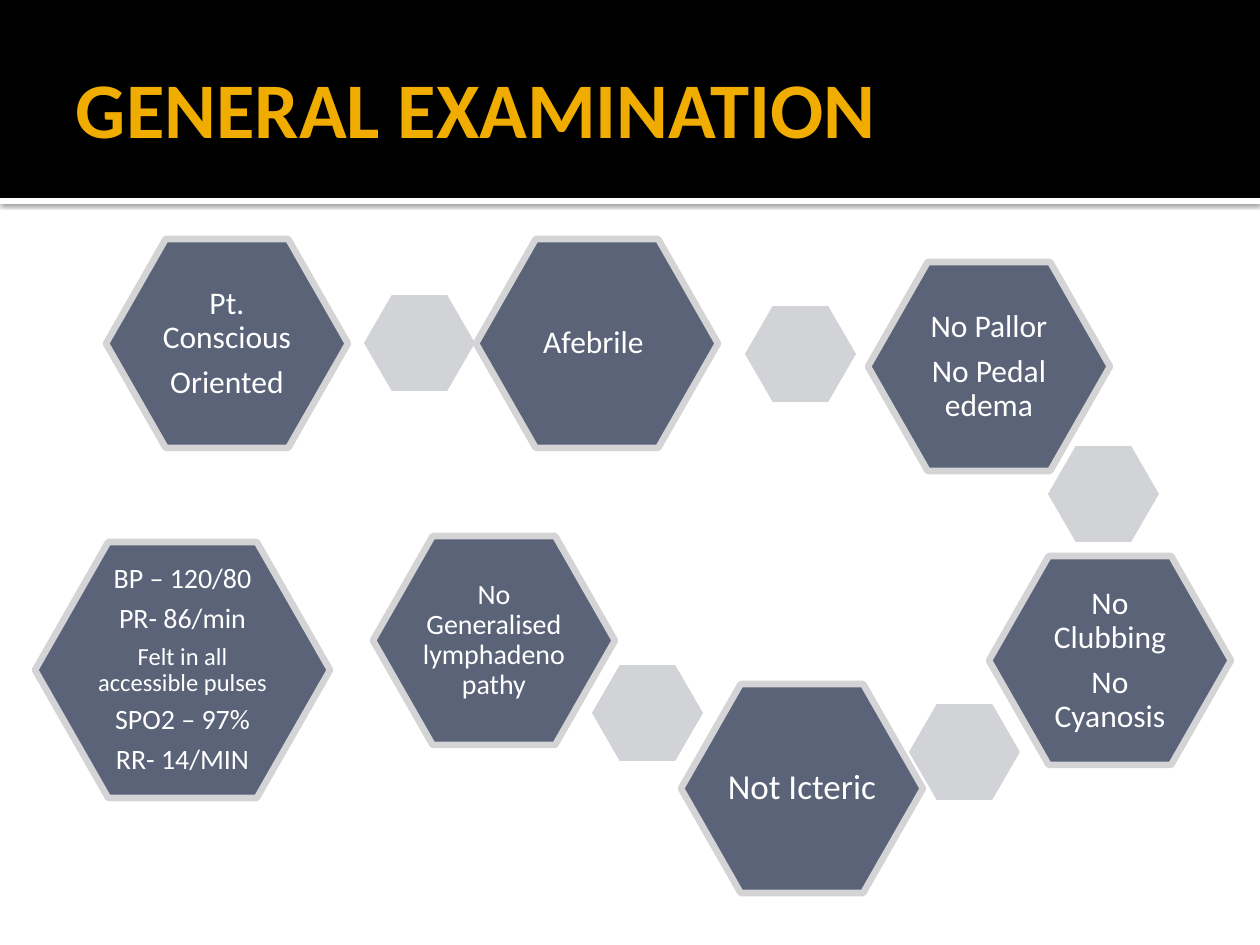
import lxml.etree
import pptx
import pptx.dml.color
import pptx.enum.shapes
import pptx.enum.text
import pptx.oxml
import pptx.oxml.ns
import pptx.util

EMU_PER_PX = 914400 / 126
FONT = "Calibri"
COLORS = {
    "black": "000000",
    "white": "FFFFFF",
    "title": "F0AD00",
    "finding": "5A6378",
    "outline": "D4D4D6",
    "link": "D2D3D6",
}
FINDING_SIZE = (242, 209)
VITALS_SIZE = (295, 256)
LINK_SIZE = (111, 96)

VITALS = (35, 542, [("BP – 120/80", 16), ("PR- 86/min", 16),
                    ("Felt in all accessible pulses", 14),
                    ("SPO2 – 97%", 16), ("RR- 14/MIN", 16)])
FINDINGS = [
    (106, 239, [("Pt. Conscious", 18), ("Oriented", 18)]),
    (476, 239, [("Afebrile ", 18)]),
    (868, 262, [("No Pallor", 18), ("No Pedal edema", 18)]),
    (989, 556, [("No Clubbing", 18), ("No Cyanosis", 18)]),
    (373, 536, [("No Generalised lymphadenopathy", 16)]),
    (681, 684, [("Not Icteric", 20)]),
]
LINKS = [(364, 295), (745, 306), (1048, 446), (909, 704), (592, 665)]


def px(length):
    return pptx.util.Emu(round(length * EMU_PER_PX))


def color(name):
    return pptx.dml.color.RGBColor.from_string(COLORS[name])


def add_filled(slide, kind, box, fill):
    shape = slide.shapes.add_shape(kind, *map(px, box))
    shape.shadow.inherit = False
    shape.fill.solid()
    shape.fill.fore_color.rgb = color(fill)
    shape.line.fill.background()
    return shape


def write_text(frame, lines, fill, margins, align, bold=False, line_spacing=None, gap=0):
    frame.word_wrap = True
    frame.auto_size = pptx.enum.text.MSO_AUTO_SIZE.NONE
    frame.vertical_anchor = pptx.enum.text.MSO_ANCHOR.MIDDLE
    (frame.margin_left, frame.margin_top,
     frame.margin_right, frame.margin_bottom) = map(px, margins)
    for index, (text, size) in enumerate(lines):
        paragraph = frame.add_paragraph() if index else frame.paragraphs[0]
        paragraph.alignment = align
        paragraph.line_spacing = line_spacing
        paragraph.space_after = pptx.util.Pt(round(size * gap, 1))
        run = paragraph.add_run()
        run.text = text
        run.font.name = FONT
        run.font.size = pptx.util.Pt(size)
        run.font.bold = bold
        run.font.color.rgb = color(fill)


def add_soft_shadow(shape):
    effects = shape._element.spPr.find(pptx.oxml.ns.qn("a:effectLst"))
    shadow = lxml.etree.SubElement(
        effects, pptx.oxml.ns.qn("a:outerShdw"),
        blurRad="31750", dist="10160", dir="5400000", algn="tl", rotWithShape="0")
    shade = lxml.etree.SubElement(shadow, pptx.oxml.ns.qn("a:srgbClr"), val=COLORS["black"])
    lxml.etree.SubElement(shade, pptx.oxml.ns.qn("a:alpha"), val="60000")


def add_header(slide, box, text):
    left, top, width, height = box
    rectangle = pptx.enum.shapes.MSO_SHAPE.RECTANGLE
    strip = add_filled(slide, rectangle, (left, top + height, width, 6), "white")
    add_soft_shadow(strip)
    add_filled(slide, rectangle, box, "black")

    title = slide.shapes.title
    title.left, title.top, title.width, title.height = map(
        px, (left + 63, top + 21, width - 126, height - 25))
    write_text(title.text_frame, [(text, 45)], "title", (13, 6, 6, 6),
               pptx.enum.text.PP_ALIGN.LEFT, bold=True)
    slide.shapes._spTree.append(title._element)


def add_hexagon(slide, box, fill, slant):
    hexagon = add_filled(slide, pptx.enum.shapes.MSO_SHAPE.HEXAGON, box, fill)
    hexagon.adjustments[0] = slant
    return hexagon


def add_finding(slide, box, lines):
    left, top, width, height = box
    hexagon = add_hexagon(slide, box, "finding", 0.286)
    hexagon.line.color.rgb = color("outline")
    hexagon.line.width = pptx.util.Pt(3.78)
    label = slide.shapes.add_textbox(*map(px, (
        left + width / 6, top + height / 6, width * 2 / 3, height * 2 / 3)))
    margin = 3 if lines[0][1] < 18 else 4
    write_text(label.text_frame, lines, "white", (margin,) * 4,
               pptx.enum.text.PP_ALIGN.CENTER, line_spacing=0.9, gap=0.35)


def add_findings_chain(slide):
    left, top, lines = VITALS
    add_finding(slide, (left, top, *VITALS_SIZE), lines)
    for left, top in LINKS:
        add_hexagon(slide, (left, top, *LINK_SIZE), "link", 0.289)
    for left, top, lines in FINDINGS:
        add_finding(slide, (left, top, *FINDING_SIZE), lines)


def main():
    presentation = pptx.Presentation()
    presentation.slide_width, presentation.slide_height = px(1260), px(945)
    slide = presentation.slides.add_slide(presentation.slide_layouts[5])
    add_header(slide, (0, 0, 1260, 198), "GENERAL EXAMINATION")
    add_findings_chain(slide)
    presentation.save("out.pptx")


if __name__ == "__main__":
    main()
